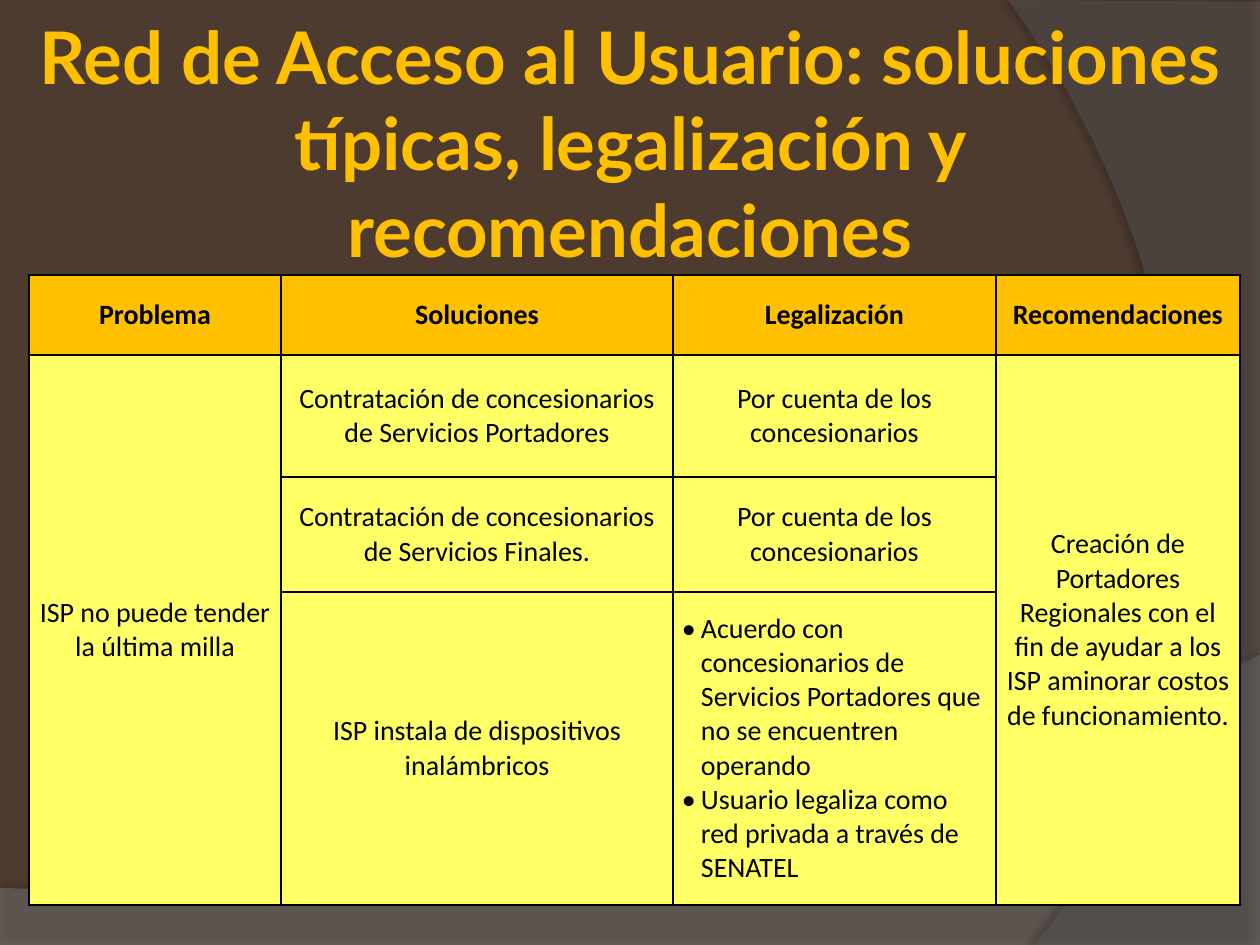
from lxml.etree import SubElement
from pptx import Presentation
from pptx.dml.color import RGBColor
from pptx.enum.text import MSO_ANCHOR as Anchor, PP_ALIGN as Align
from pptx.oxml.ns import qn
from pptx.util import Pt

SCALE = 914400 / 126
WIDTH, HEIGHT = 1260, 945


def emu(px):
    return round(px * SCALE)


def color(value):
    return RGBColor.from_string(value)


def child(parent, tag, **attributes):
    return SubElement(parent, qn(tag), {key: str(value) for key, value in attributes.items()})


def write(paragraph, text, font="Calibri", size=16, ink="000000", bold=False, align=Align.CENTER, bullet=False):
    paragraph.alignment = align
    run = paragraph.add_run()
    run.text = text
    run.font.name = font
    run.font.size = Pt(size)
    run.font.bold = bold
    run.font.color.rgb = color(ink)
    if bullet:
        properties = paragraph._p.get_or_add_pPr()
        properties.set("marL", str(emu(19)))
        properties.set("indent", str(-emu(19)))
        child(properties, "a:buFont", typeface="Calibri")
        child(properties, "a:buChar", char="•")


def bezier(start, first, second, end, steps=40):
    def point(t):
        weights = ((1 - t) ** 3, 3 * t * (1 - t) ** 2, 3 * t * t * (1 - t), t ** 3)
        return tuple(
            round(sum(weight * value for weight, value in zip(weights, axis)))
            for axis in zip(start, first, second, end)
        )

    return [point(step / steps) for step in range(steps + 1)]


class SlideBuilder:
    gold = "FFC000"
    yellow = "FFFF66"
    black = "000000"
    background = "4E3B30"

    def __init__(self, presentation):
        self.slide = presentation.slides.add_slide(presentation.slide_layouts[6])
        fill = self.slide.background.fill
        fill.solid()
        fill.fore_color.rgb = color(self.background)

    def wave(self, points, fill, opacity, shadow_opacity, distance, direction):
        builder = self.slide.shapes.build_freeform(*points[0], scale=SCALE)
        builder.add_line_segments(points[1:], close=True)
        shape = builder.convert_to_shape()
        shape.line.fill.background()
        shape.fill.solid()
        shape.fill.fore_color.rgb = color(fill)
        fill_color = shape._element.spPr.find(qn("a:solidFill"))[0]
        child(fill_color, "a:alpha", val=opacity * 1000)
        shape.shadow.inherit = False
        effects = shape._element.spPr.find(qn("a:effectLst"))
        shadow = child(effects, "a:outerShdw", blurRad=Pt(4), dist=Pt(distance),
                       dir=direction * 60000, algn="ctr", rotWithShape=0)
        child(child(shadow, "a:srgbClr", val=self.black), "a:alpha", val=shadow_opacity * 1000)

    def title(self, text, left, top, width, height):
        box = self.slide.shapes.add_textbox(*map(emu, (left, top, width, height)))
        frame = box.text_frame
        frame.word_wrap = True
        frame.vertical_anchor = Anchor.MIDDLE
        frame.margin_left = frame.margin_right = frame.margin_top = frame.margin_bottom = emu(6)
        write(frame.paragraphs[0], text, font="Lato", size=41.4, ink=self.gold, bold=True)

    def style_cell(self, cell, fill):
        properties = cell._tc.get_or_add_tcPr()
        for side in ("a:lnL", "a:lnR", "a:lnT", "a:lnB"):
            line = child(properties, side, w=Pt(1))
            child(child(line, "a:solidFill"), "a:srgbClr", val=self.black)
        cell.fill.solid()
        cell.fill.fore_color.rgb = color(fill)
        cell.vertical_anchor = Anchor.MIDDLE
        cell.margin_left = cell.margin_right = emu(9)
        cell.margin_top = cell.margin_bottom = 0

    def table(self, rows, left, top, column_widths, row_heights, merged_columns):
        frame = self.slide.shapes.add_table(
            len(row_heights), len(column_widths),
            *map(emu, (left, top, sum(column_widths), sum(row_heights))))
        table = frame.table
        table.first_row = table.horz_banding = False
        for column, width in zip(table.columns, column_widths):
            column.width = emu(width)
        for row, height in zip(table.rows, row_heights):
            row.height = emu(height)
        for row_index, row in enumerate(rows):
            header = row_index == 0
            for column_index, content in enumerate(row):
                cell = table.cell(row_index, column_index)
                self.style_cell(cell, self.gold if header else self.yellow)
                frame = cell.text_frame
                if isinstance(content, list):
                    for index, item in enumerate(content):
                        paragraph = frame.add_paragraph() if index else frame.paragraphs[0]
                        write(paragraph, item, align=Align.LEFT, bullet=True)
                elif content:
                    write(frame.paragraphs[0], content, bold=header)
        for column_index in merged_columns:
            table.cell(1, column_index).merge(table.cell(len(rows) - 1, column_index))


ROWS = [
    ["Problema", "Soluciones", "Legalización", "Recomendaciones"],
    ["ISP no puede tender la última milla",
     "Contratación de concesionarios de Servicios Portadores",
     "Por cuenta de los concesionarios",
     "Creación de Portadores Regionales con el fin de ayudar a los ISP "
     "aminorar costos de funcionamiento."],
    [None, "Contratación de concesionarios de Servicios Finales.",
     "Por cuenta de los concesionarios", None],
    [None, "ISP instala de dispositivos inalámbricos",
     ["Acuerdo con concesionarios de Servicios Portadores que no se encuentren operando",
      "Usuario legaliza como red privada a través de SENATEL"], None],
]


def main():
    presentation = Presentation()
    presentation.slide_width = emu(WIDTH)
    presentation.slide_height = emu(HEIGHT)
    builder = SlideBuilder(presentation)
    bottom_curve = bezier((WIDTH, 655), (704, 919), (493, 906), (0, 888))
    builder.wave([(0, HEIGHT), (WIDTH, HEIGHT)] + bottom_curve, "7F7F7F", 45, 35, 3.5, 270)
    right_curve = bezier((1034, HEIGHT), (1178, 780), (1283, 378), (1008, 0))
    builder.wave([(WIDTH, 2), (WIDTH, HEIGHT)] + right_curve, "5E5E5E", 40, 45, 4, 180)
    builder.title("Red de Acceso al Usuario: soluciones típicas, legalización y recomendaciones",
                  0, 38, WIDTH, 208)
    builder.table(ROWS, 29, 275, (252, 392, 323, 244), (80, 122, 115, 313), merged_columns=(0, 3))
    presentation.save("out.pptx")


if __name__ == "__main__":
    main()
